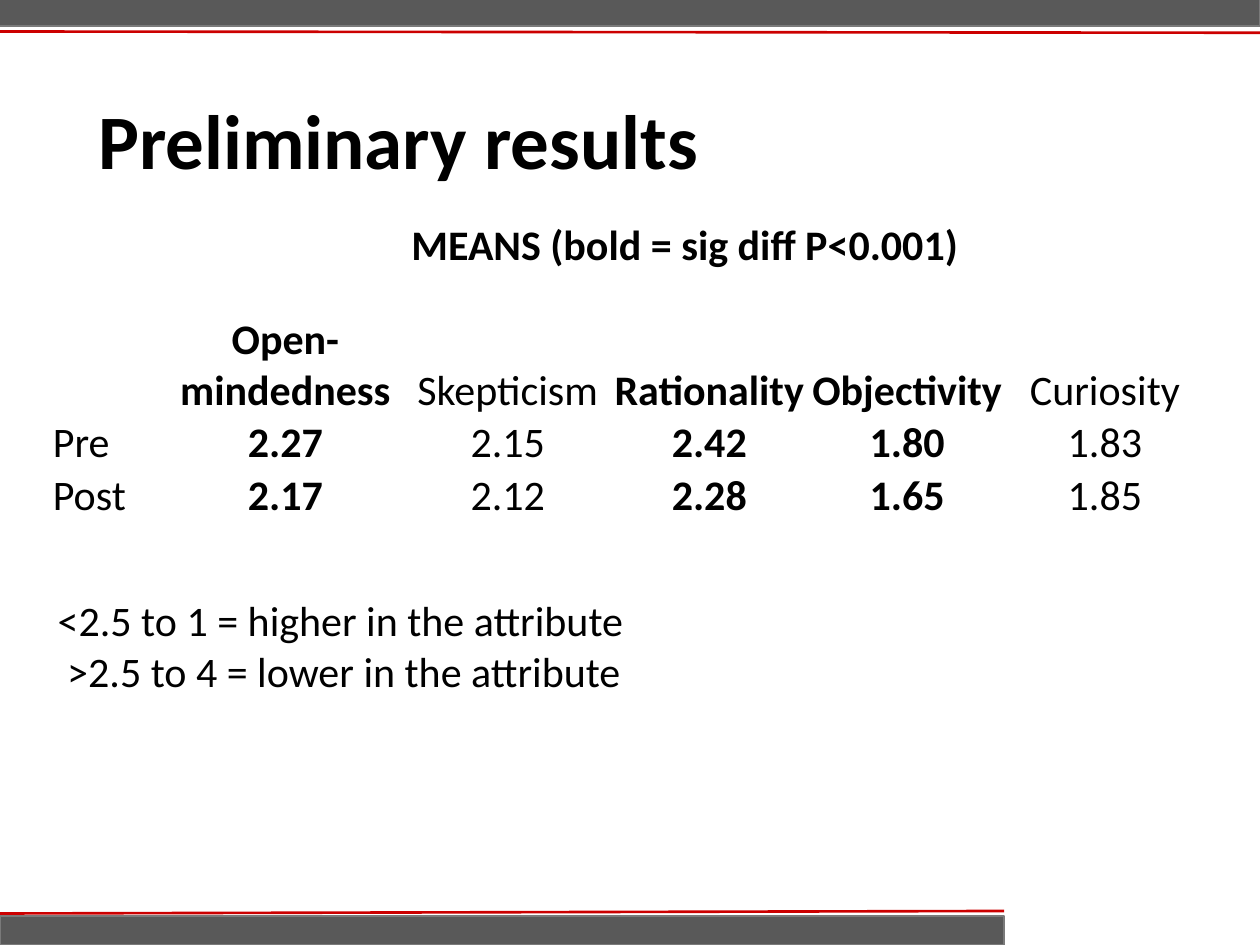
from pptx import Presentation
from pptx import util as u
from pptx.dml.color import RGBColor
from pptx.enum import shapes, text
from pptx.oxml.ns import qn
from lxml import etree

BLACK = RGBColor(0x00, 0x00, 0x00)
GREY = RGBColor(0x59, 0x59, 0x59)
EDGE = RGBColor(0x7A, 0x7A, 0x7A)
RED = RGBColor(0xCC, 0x00, 0x00)

LEFT, MID = text.PP_ALIGN.LEFT, text.PP_ALIGN.CENTER


def write(frame, lines, size=24, bold=False, align=LEFT, space=None):
    """Put one paragraph per line into a text frame."""
    for i, line in enumerate(lines.split("\n")):
        para = frame.paragraphs[0] if i == 0 else frame.add_paragraph()
        para.alignment = align
        if space:
            para.line_spacing = space
        run = para.add_run()
        run.text = line
        font = run.font
        font.name, font.size, font.bold = "Calibri", u.Pt(size), bold
        font.color.rgb = BLACK


def inches(*nums):
    return [u.Inches(n) for n in nums]


class Page:
    """Holds the slide and draws each kind of element on it."""

    def __init__(self, slide):
        self.slide = slide
        self.shapes = slide.shapes

    def bar(self, *box):
        bar = self.shapes.add_shape(shapes.MSO_SHAPE.RECTANGLE, *inches(*box))
        bar.shadow.inherit = False
        bar.fill.solid()
        bar.fill.fore_color.rgb = GREY
        bar.line.color.rgb = EDGE
        bar.line.width = u.Pt(1)

    def rule(self, *ends):
        rule = self.shapes.add_connector(
            shapes.MSO_CONNECTOR.STRAIGHT, *inches(*ends))
        rule.line.color.rgb = RED
        rule.line.width = u.Pt(1.5)
        etree.SubElement(rule._element.spPr, qn("a:effectLst"))

    def title(self, words, *box):
        title = self.shapes.title
        title.left, title.top, title.width, title.height = inches(*box)
        frame = title.text_frame
        frame.vertical_anchor = text.MSO_ANCHOR.MIDDLE
        write(frame, words, size=44, bold=True, space=0.9)

    def note(self, words, *box):
        frame = self.shapes.add_textbox(*inches(*box)).text_frame
        frame.word_wrap = True
        frame.auto_size = text.MSO_AUTO_SIZE.SHAPE_TO_FIT_TEXT
        write(frame, words)

    def table(self, data, cols, rows, strong, left, top):
        box = inches(left, top, sum(cols), sum(rows))
        table = self.shapes.add_table(len(rows), len(cols), *box).table
        table.first_row = table.horz_banding = False
        for col, width in zip(table.columns, cols):
            col.width = u.Inches(width)
        for row, height in zip(table.rows, rows):
            row.height = u.Inches(height)
        # The heading spans all the value columns
        table.cell(0, 1).merge(table.cell(0, len(cols) - 1))
        for r, line in enumerate(data):
            for c, words in enumerate(line):
                cell = table.cell(r, c)
                cell.fill.background()
                cell.vertical_anchor = text.MSO_ANCHOR.BOTTOM
                cell.margin_left = cell.margin_right = u.Inches(0.01)
                cell.margin_top, cell.margin_bottom = inches(0.01, 0)
                if words:
                    write(cell.text_frame, words, bold=c in strong,
                          align=MID if c else LEFT)


def main():
    deck = Presentation()
    deck.slide_width, deck.slide_height = inches(10, 7.5)
    page = Page(deck.slides.add_slide(deck.slide_layouts[5]))

    # Bands at the foot and the head
    page.bar(0, 7.27, 7.97, 0.23)
    page.rule(-0.01, 7.25, 7.97, 7.23)
    page.bar(-0.01, -0.02, 10.01, 0.23)
    page.rule(-0.01, 0.25, 10, 0.26)

    page.title("Preliminary results", 0.68, 0.42, 8.62, 1.45)

    # Mean scores, with significant columns in bold
    means = [
        ["", "MEANS (bold = sig diff P<0.001)"],
        ["", "Open-mindedness", "Skepticism", "Rationality", "Objectivity",
         "Curiosity"],
        ["Pre", "2.27", "2.15", "2.42", "1.80", "1.83"],
        ["Post", "2.17", "2.12", "2.28", "1.65", "1.85"],
    ]
    page.table(means, cols=[0.9, 1.91, 1.62, 1.58, 1.56, 1.58],
               rows=[0.4, 1.15, 0.4, 0.4], strong={1, 3, 4},
               left=0.41, top=1.74)

    # Key to the scale
    page.note("<2.5 to 1 = higher in the attribute\n"
              " >2.5 to 4 = lower in the attribute", 0.36, 4.67, 8.42, 0.91)

    deck.save("out.pptx")


if __name__ == "__main__":
    main()
